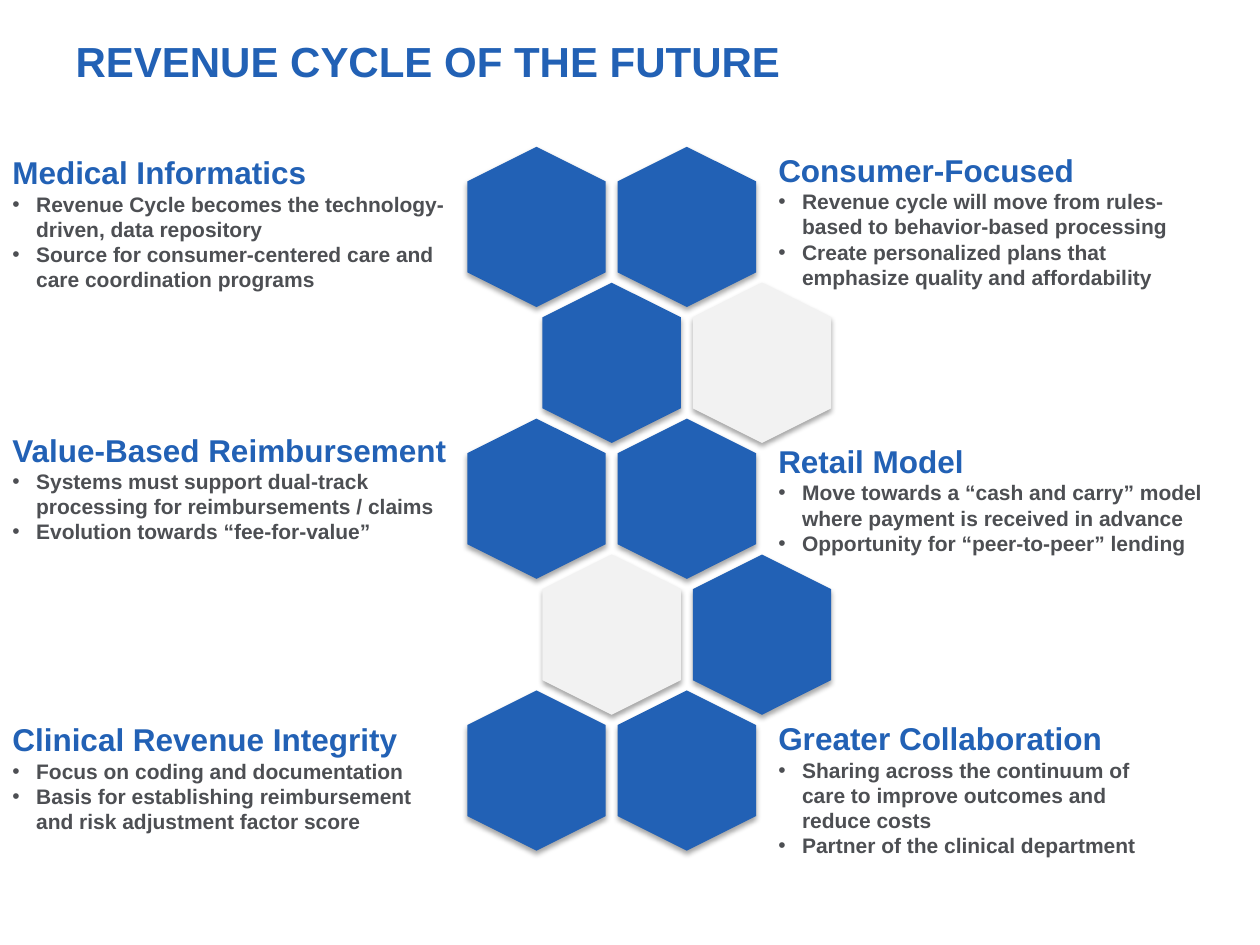
from dataclasses import dataclass

from lxml.etree import SubElement
from pptx import Presentation
from pptx.dml.color import RGBColor
from pptx.enum.shapes import MSO_SHAPE as Shape
from pptx.enum.text import MSO_ANCHOR as Anchor, MSO_AUTO_SIZE as AutoSize, PP_ALIGN as Align
from pptx.oxml.ns import qn
from pptx.util import Cm, Pt


@dataclass(frozen=True)
class Theme:
    font: str = "Arial"
    blue: str = "2261B5"
    pale: str = "F2F2F2"
    gray: str = "4D4F53"
    shadow: str = "000000"
    title: int = 24
    heading: int = 18
    body: int = 12


THEME = Theme()
TITLE = "REVENUE CYCLE OF THE FUTURE"

HEXAGON_ROWS = [
    (THEME.blue, THEME.blue),
    (THEME.blue, THEME.pale),
    (THEME.blue, THEME.blue),
    (THEME.pale, THEME.blue),
    (THEME.blue, THEME.blue),
]
HEXAGON_LEFT, HEXAGON_TOP = 9.2, 3.18
HEXAGON_WIDTH, HEXAGON_HEIGHT = 3.23, 2.79
COLUMN_STEP, ROW_STEP = 3.03, 2.74

LEFT_COLUMN, RIGHT_COLUMN = 0, 15.44
TOPICS = [
    (LEFT_COLUMN, 2.97, 9.32, 3.07, "Medical Informatics", [
        "Revenue Cycle becomes the technology-driven, data repository",
        "Source for consumer-centered care and care coordination programs",
    ]),
    (LEFT_COLUMN, 8.56, 9.32, 2.57, "Value-Based Reimbursement", [
        "Systems must support dual-track processing for reimbursements / claims",
        "Evolution towards “fee-for-value”",
    ]),
    (LEFT_COLUMN, 14.4, 9.32, 2.57, "Clinical Revenue Integrity", [
        "Focus on coding and documentation",
        "Basis for establishing reimbursement and risk adjustment factor score",
    ]),
    (RIGHT_COLUMN, 2.92, 9.09, 3.07, "Consumer-Focused", [
        "Revenue cycle will move from rules-based to behavior-based processing",
        "Create personalized plans that emphasize quality and affordability",
    ]),
    (RIGHT_COLUMN, 8.79, 9.09, 2.57, "Retail Model", [
        "Move towards a “cash and carry” model where payment is received in advance",
        "Opportunity for “peer-to-peer” lending",
    ]),
    (RIGHT_COLUMN, 14.38, 8.46, 3.07, "Greater Collaboration", [
        "Sharing across the continuum of care to improve outcomes and reduce costs",
        "Partner of the clinical department",
    ]),
]


def style_paragraph(para, size, color):
    para.alignment = Align.LEFT
    for span in para.runs:
        span.font.name = THEME.font
        span.font.size = Pt(size)
        span.font.bold = True
        span.font.color.rgb = RGBColor.from_string(color)


def add_bullet(para):
    properties = para._p.get_or_add_pPr()
    indent = Cm(0.48)
    properties.set("marL", str(indent))
    properties.set("indent", str(-indent))
    SubElement(properties, qn("a:buFont"), typeface=THEME.font)
    SubElement(properties, qn("a:buChar"), char="•")


def add_shadow(shape):
    shape.shadow.inherit = False
    effects = shape._element.spPr.find(qn("a:effectLst"))
    shadow = SubElement(effects, qn("a:outerShdw"), blurRad=str(Pt(3.1)),
                        dist=str(Pt(1.8)), dir="5400000", rotWithShape="0")
    color = SubElement(shadow, qn("a:srgbClr"), val=THEME.shadow)
    SubElement(color, qn("a:alpha"), val="35000")


def add_title(slide):
    title = slide.shapes.title
    title.left, title.top, title.width, title.height = Cm(1.27), Cm(0.48), Cm(22.86), Cm(1.47)
    title.text_frame.text = TITLE
    title.text_frame.vertical_anchor = Anchor.MIDDLE
    style_paragraph(title.text_frame.paragraphs[0], THEME.title, THEME.blue)


def add_honeycomb(slide):
    honeycomb = slide.shapes.add_group_shape()
    for row, colors in enumerate(HEXAGON_ROWS):
        for column, color in enumerate(colors):
            left = HEXAGON_LEFT + (column + row % 2 / 2) * COLUMN_STEP
            top = HEXAGON_TOP + row * ROW_STEP
            hexagon = honeycomb.shapes.add_shape(
                Shape.HEXAGON, Cm(left), Cm(top), Cm(HEXAGON_WIDTH), Cm(HEXAGON_HEIGHT))
            hexagon.rotation = 90
            hexagon.adjustments[0] = 0.25
            hexagon.fill.solid()
            hexagon.fill.fore_color.rgb = RGBColor.from_string(color)
            hexagon.line.fill.background()
            add_shadow(hexagon)


def add_topic(slide, left, top, width, height, heading, points):
    box = slide.shapes.add_textbox(Cm(left), Cm(top), Cm(width), Cm(height))
    frame = box.text_frame
    frame.word_wrap = True
    frame.auto_size = AutoSize.SHAPE_TO_FIT_TEXT
    frame.text = heading
    style_paragraph(frame.paragraphs[0], THEME.heading, THEME.blue)
    for point in points:
        para = frame.add_paragraph()
        para.text = point
        style_paragraph(para, THEME.body, THEME.gray)
        add_bullet(para)


def main():
    deck = Presentation()
    deck.slide_width, deck.slide_height = Cm(25.4), Cm(19.05)
    slide = deck.slides.add_slide(deck.slide_layouts.get_by_name("Title Only"))
    add_title(slide)
    add_honeycomb(slide)
    for topic in TOPICS:
        add_topic(slide, *topic)
    deck.save("out.pptx")


if __name__ == "__main__":
    main()
